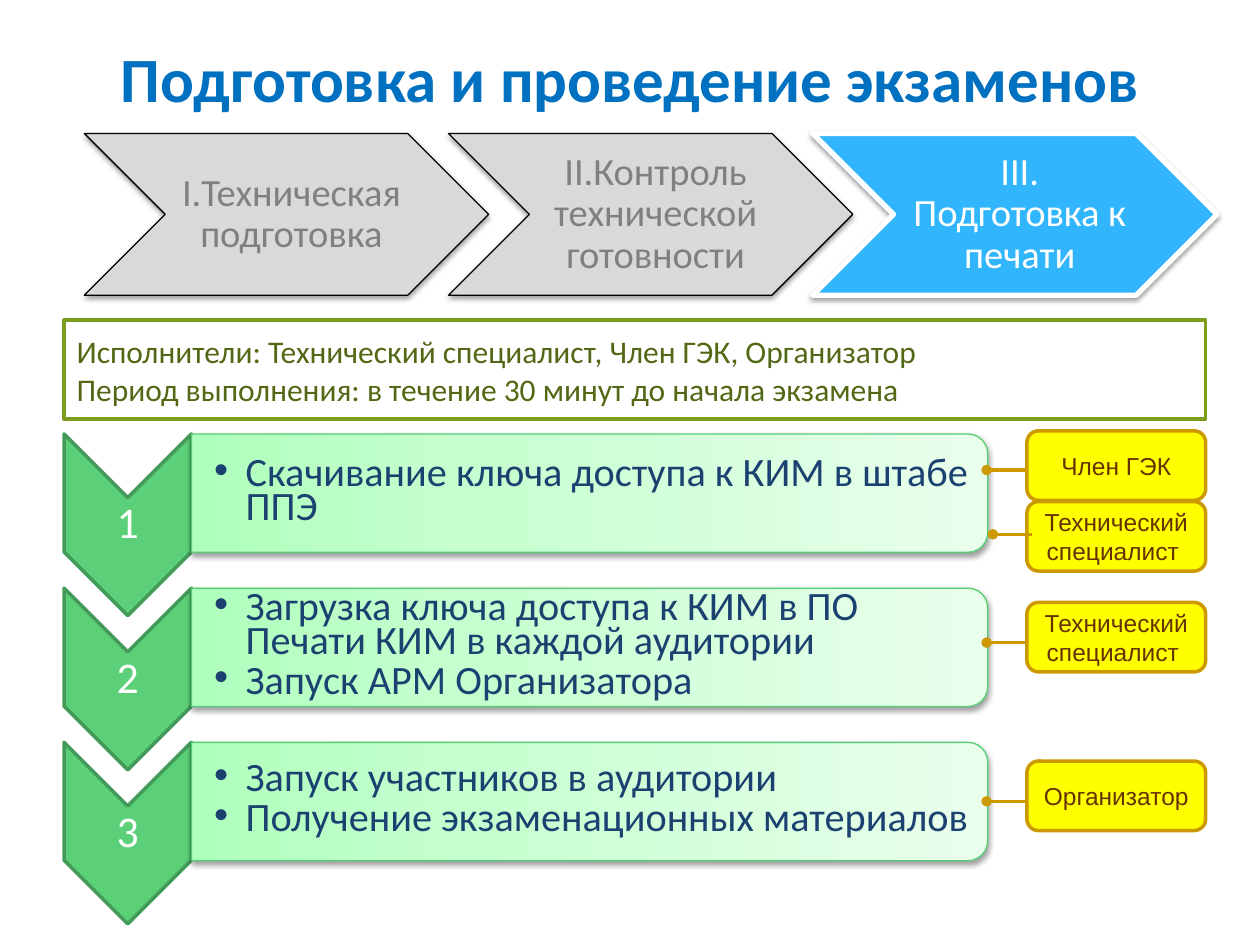
import pptx
import pptx.util
import pptx.dml.color
import pptx.enum.shapes
import pptx.enum.text
import pptx.oxml
import pptx.oxml.ns

Pt = pptx.util.Pt
RGBColor = pptx.dml.color.RGBColor
MSO_SHAPE = pptx.enum.shapes.MSO_SHAPE
PP_ALIGN = pptx.enum.text.PP_ALIGN
MIDDLE = pptx.enum.text.MSO_ANCHOR.MIDDLE
NS = pptx.oxml.ns.nsdecls("a")

WHITE = RGBColor(0xFF, 0xFF, 0xFF)
BLACK = RGBColor(0, 0, 0)
TITLE_BLUE = RGBColor(0x00, 0x70, 0xC0)
STAGE_GRAY = RGBColor(0xD9, 0xD9, 0xD9)
STAGE_TEXT = RGBColor(0x80, 0x80, 0x80)
STAGE_BLUE = RGBColor(0x31, 0xB6, 0xFD)
STEP_GREEN = RGBColor(0x5B, 0xD0, 0x78)
STEP_EDGE = RGBColor(0x43, 0x9A, 0x59)
BAR_EDGE = RGBColor(0x56, 0xCE, 0x74)
BAR_TEXT = RGBColor(0x1B, 0x41, 0x71)
BAR_STOPS = [(0, RGBColor(0xAE, 0xFF, 0xBC)), (35, RGBColor(0xC6, 0xFF, 0xCF)),
             (100, RGBColor(0xE9, 0xFF, 0xEC))]
YELLOW = RGBColor(0xFF, 0xFF, 0x00)
GOLD = RGBColor(0xCC, 0x99, 0x00)
BROWN = RGBColor(0x66, 0x33, 0x00)
OLIVE = RGBColor(0x7C, 0x9C, 0x1E)
OLIVE_TEXT = RGBColor(0x52, 0x68, 0x14)

STAGES = [  # text, fill, line, line width, text colour
    ("I.Техническая подготовка", STAGE_GRAY, BLACK, 0.75, STAGE_TEXT),
    ("II.Контроль технической готовности", STAGE_GRAY, BLACK, 0.75, STAGE_TEXT),
    ("III. Подготовка к печати", STAGE_BLUE, WHITE, 3, WHITE),
]
STEPS = [
    ["Скачивание ключа доступа к КИМ в штабе ППЭ"],
    ["Загрузка ключа доступа к КИМ в ПО Печати КИМ в каждой аудитории",
     "Запуск АРМ Организатора"],
    ["Запуск участников в аудитории", "Получение экзаменационных материалов"],
]
ROLES = [  # text, box top, connector start x, end x, y
    ("Член ГЭК", 246.2, 586.8, 563.8, 268.6),
    ("Технический специалист ", 286.6, 589.7, 567.4, 305.3),
    ("Технический специалист ", 344.2, 586.8, 563.8, 367.2),
    ("Организатор", 434.9, 586.8, 563.8, 457.9),
]
PERFORMERS = ["Исполнители: Технический специалист, Член ГЭК, Организатор",
              "Период выполнения: в течение 30 минут до начала экзамена"]


def write(tf, lines, size, color, name="Calibri", bold=False, align=PP_ALIGN.CENTER,
          spacing=None, after=None, insets=None, bullet=False):
    tf.word_wrap = True
    tf.vertical_anchor = MIDDLE
    sides = ("margin_left", "margin_top", "margin_right", "margin_bottom")
    for side, inset in zip(sides, insets or ()):
        setattr(tf, side, Pt(inset))
    for i, line in enumerate(lines):
        p = tf.paragraphs[0] if i == 0 else tf.add_paragraph()
        paragraph_format = {"alignment": align, "line_spacing": spacing,
                            "space_after": None if after is None else Pt(after)}
        for key, value in paragraph_format.items():
            setattr(p, key, value)
        if bullet:
            pPr = p._p.get_or_add_pPr()
            pPr.set("marL", str(Pt(18)))
            pPr.set("indent", str(-Pt(18)))
            pPr.append(pptx.oxml.parse_xml(f'<a:buFont {NS} typeface="Arial"/>'))
            pPr.append(pptx.oxml.parse_xml(f'<a:buChar {NS} char="•"/>'))
        r = p.add_run()
        r.text = line
        for key, value in {"size": Pt(size), "name": name, "bold": bold}.items():
            setattr(r.font, key, value)
        r.font.color.rgb = color


def add_text(s, box, lines, size, color, **fmt):
    sp = s.shapes.add_textbox(*map(Pt, box))
    write(sp.text_frame, lines, size, color, **fmt)


def add_box(s, kind, box, fill, line, width, turned=False):
    """Draw a preset shape; a turned one fills the box after a 90° rotation."""
    x, y, w, h = box
    if turned:
        x, y, w, h = x + (w - h) / 2, y + (h - w) / 2, h, w
    sp = s.shapes.add_shape(kind, Pt(x), Pt(y), Pt(w), Pt(h))
    sp.rotation = 90 if turned else 0
    sp.shadow.inherit = False
    if fill is not None:
        sp.fill.solid()
        sp.fill.fore_color.rgb = fill
    sp.line.color.rgb = line
    sp.line.width = Pt(width)
    return sp


def add_shadow(sp):
    effects = sp._element.spPr.find(pptx.oxml.ns.qn("a:effectLst"))
    effects.append(pptx.oxml.parse_xml(
        f'<a:outerShdw {NS} blurRad="{Pt(3.1)}" dist="{Pt(1.6)}" dir="5400000" '
        'rotWithShape="0"><a:srgbClr val="000000"><a:alpha val="38000"/>'
        '</a:srgbClr></a:outerShdw>'))


def add_gradient(sp, stops):
    gs = "".join(f'<a:gs pos="{pos * 1000}"><a:srgbClr val="{color}"/></a:gs>'
                 for pos, color in stops)
    geometry = sp._element.spPr.find(pptx.oxml.ns.qn("a:prstGeom"))
    geometry.addnext(pptx.oxml.parse_xml(
        f'<a:gradFill {NS} rotWithShape="1"><a:gsLst>{gs}</a:gsLst>'
        '<a:lin ang="16200000" scaled="0"/></a:gradFill>'))


def add_stage(s, i, text, fill, line, width, color):
    x = 48.2 + 208.1 * i
    sp = add_box(s, MSO_SHAPE.CHEVRON, (x, 76.3, 231, 92.4), fill, line, width)
    add_shadow(sp)
    add_text(s, (x + 46.4, 76.3, 139, 92.4), [text], 22, color,
             spacing=0.9, insets=(7.2, 2.2, 2.2, 2.2))


def add_step(s, i, lines):
    y = 248 + 88.1 * i
    add_box(s, MSO_SHAPE.CHEVRON, (36.6, y, 72.8, 103.8), STEP_GREEN, STEP_EDGE, 2,
            turned=True)
    add_text(s, (36.6, y + 36.4, 72.8, 31), [str(i + 1)], 25, WHITE,
             spacing=0.9, insets=(1.4,) * 4)
    bar = add_box(s, MSO_SHAPE.ROUND_2_SAME_RECTANGLE, (109.4, y, 455, 67.6), None,
                  BAR_EDGE, 0.75, turned=True)
    add_gradient(bar, BAR_STOPS)
    add_shadow(bar)
    add_text(s, (109.4, y + 3.4, 451.6, 60.8), lines, 23, BAR_TEXT, bullet=True,
             align=PP_ALIGN.LEFT, spacing=0.7, after=3.5, insets=(13, 1.4, 1.4, 1.4))


def add_role(s, text, top, x1, x2, y):
    sp = add_box(s, MSO_SHAPE.ROUNDED_RECTANGLE, (586.8, top, 102.2, 39.7), YELLOW, GOLD, 2)
    write(sp.text_frame, [text], 14, BROWN, name="Arial")
    c = s.shapes.add_connector(pptx.enum.shapes.MSO_CONNECTOR.STRAIGHT,
                               Pt(x1), Pt(y), Pt(x2), Pt(y))
    c.line.color.rgb = GOLD
    c.line.width = Pt(1.75)
    c.line._get_or_add_ln().append(pptx.oxml.parse_xml(f'<a:tailEnd {NS} type="oval"/>'))
    c._element.spPr.append(pptx.oxml.parse_xml(f'<a:effectLst {NS}/>'))


def main():
    prs = pptx.Presentation()
    prs.slide_width, prs.slide_height = Pt(720), Pt(540)
    s = prs.slides.add_slide(prs.slide_layouts[5])

    # Title
    title = s.shapes.title
    for key, value in {"left": 36, "top": 13, "width": 648, "height": 62.6}.items():
        setattr(title, key, Pt(value))
    write(title.text_frame, ["Подготовка и проведение экзаменов"], 36, TITLE_BLUE, bold=True)

    # Stages of the preparation
    for i, stage in enumerate(STAGES):
        add_stage(s, i, *stage)

    # Performers and period
    sp = add_box(s, MSO_SHAPE.RECTANGLE, (36.7, 182.9, 652.3, 56.6), WHITE, OLIVE, 2)
    write(sp.text_frame, PERFORMERS, 18, OLIVE_TEXT, align=PP_ALIGN.LEFT)

    # Numbered steps and the people responsible
    for i, lines in enumerate(STEPS):
        add_step(s, i, lines)
    for role in ROLES:
        add_role(s, *role)

    prs.save("out.pptx")


if __name__ == "__main__":
    main()
